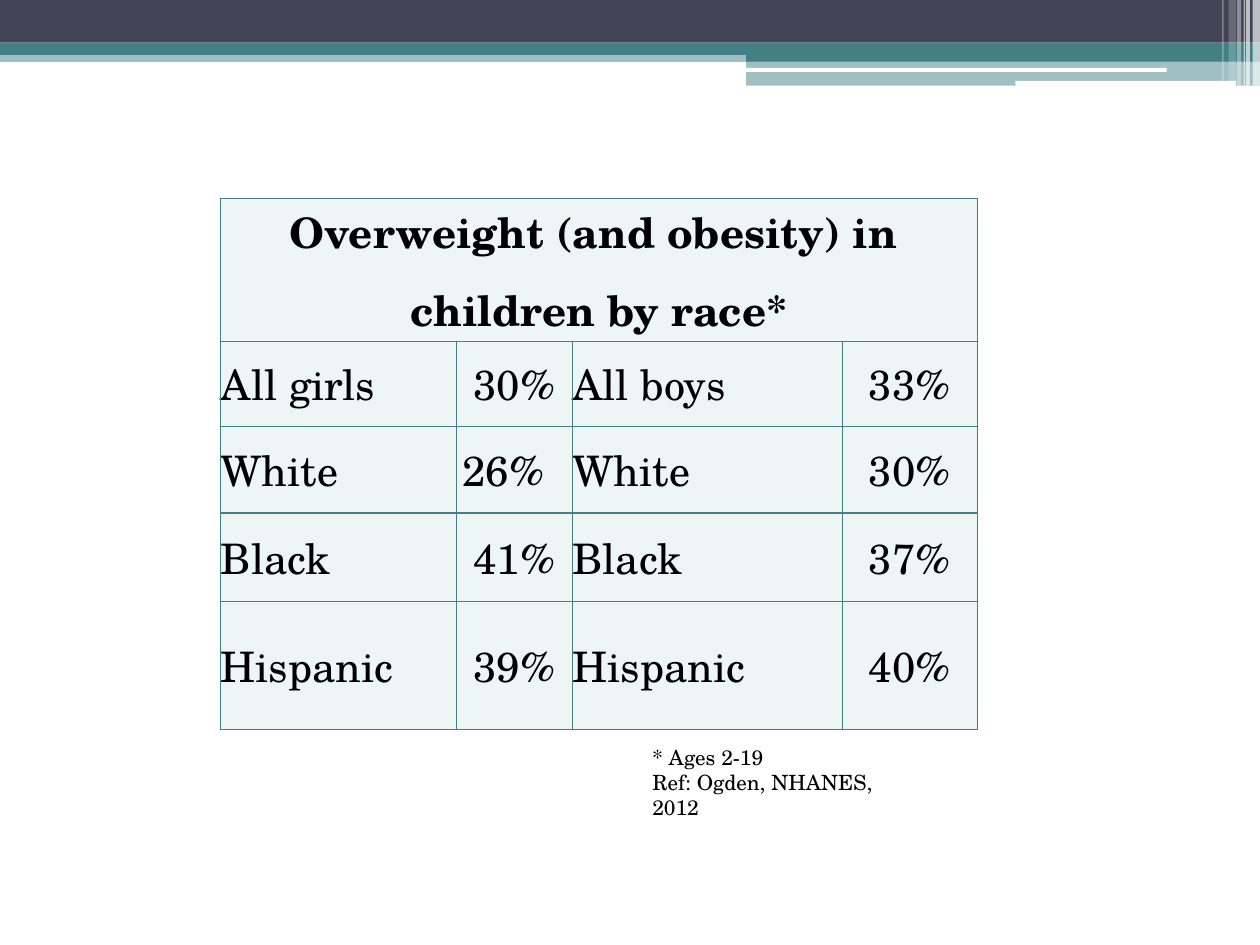
from dataclasses import dataclass

import pptx
import pptx.dml.color
import pptx.enum.shapes
import pptx.enum.text
import pptx.oxml
import pptx.oxml.ns
import pptx.util
from lxml import etree

Cm = pptx.util.Cm
Pt = pptx.util.Pt
RGBColor = pptx.dml.color.RGBColor
Kind = pptx.enum.shapes.MSO_SHAPE
Align = pptx.enum.text.PP_ALIGN
qn = pptx.oxml.ns.qn

TEAL = RGBColor(0x43, 0x80, 0x86)
SLATE = RGBColor(0x42, 0x44, 0x56)
WHITE = RGBColor(0xFF, 0xFF, 0xFF)
BLACK = RGBColor(0x00, 0x00, 0x00)
PALE = RGBColor(0xED, 0xF5, 0xF5)
FONT = "TeX Gyre Schola"


@dataclass
class Band:
    left: float
    top: float
    width: float
    height: float
    color: RGBColor
    alpha: int = 100
    kind: Kind = Kind.RECTANGLE


@dataclass
class Group:
    girls: str
    girl_rate: str
    boys: str
    boy_rate: str
    height: float


BANDS = [
    Band(0, 1.02, 25.4, 0.23, TEAL, 50),
    Band(0, 0, 25.4, 0.86, SLATE),
    Band(0, 0.86, 25.4, 0.25, TEAL),
    Band(15.04, 0.99, 10.36, 0.25, TEAL),
    Band(15.04, 1.22, 10.36, 0.51, TEAL, 50),
    Band(15.01, 1.37, 8.51, 0.08, WHITE, kind=Kind.ROUNDED_RECTANGLE),
    Band(20.47, 1.63, 4.45, 0.1, WHITE, kind=Kind.ROUNDED_RECTANGLE),
    Band(25.25, 0, 0.15, 1.73, WHITE, 65),
    Band(25.12, 0, 0.08, 1.73, WHITE, 65),
    Band(25.07, 0, 0.03, 1.73, WHITE, 60),
    Band(24.94, 0, 0.08, 1.73, WHITE, 40),
    Band(24.77, 0, 0.15, 1.63, WHITE, 20),
    Band(24.64, 0, 0.03, 1.63, WHITE, 30),
]

HEAD = ["Overweight (and obesity) in ", "children by race*"]
HEAD_TALL = 2.74
GROUPS = [
    Group("All girls", "30%", "All boys", "33%", 1.7),
    Group("White", "26%", "White", "30%", 1.75),
    Group("Black", "41%", "Black", "37%", 1.78),
    Group("Hispanic", "39%", "Hispanic", "40%", 2.59),
]
WIDTHS = [4.75, 2.34, 5.44, 2.72]
NOTE = ["* Ages 2-19", "Ref: Ogden, NHANES, 2012"]


def draw_band(slide, band: Band) -> None:
    shape = slide.shapes.add_shape(
        band.kind, Cm(band.left), Cm(band.top), Cm(band.width), Cm(band.height)
    )
    shape.shadow.inherit = False
    shape.line.fill.background()
    shape.fill.solid()
    shape.fill.fore_color.rgb = band.color
    if band.alpha < 100:
        color = shape._element.spPr.find(".//" + qn("a:srgbClr"))
        etree.SubElement(color, qn("a:alpha"), val=str(band.alpha * 1000))


def write(frame, lines: list[str], size: int, align: Align,
          bold: bool = False, gap: float = 0) -> None:
    for index, line in enumerate(lines):
        para = frame.paragraphs[0] if index == 0 else frame.add_paragraph()
        para.alignment = align
        if index:
            para.space_before = Pt(gap)
        run = para.add_run()
        run.text = line
        run.font.name = FONT
        run.font.size = Pt(size)
        run.font.bold = bold
        run.font.color.rgb = BLACK


def dress(cell) -> None:
    props = cell._tc.get_or_add_tcPr()
    for side in ("lnL", "lnR", "lnT", "lnB"):
        line = etree.SubElement(props, qn("a:" + side), w=str(Pt(0.75)))
        fill = etree.SubElement(line, qn("a:solidFill"))
        etree.SubElement(fill, qn("a:srgbClr"), val=str(TEAL))
    cell.fill.solid()
    cell.fill.fore_color.rgb = PALE
    cell.margin_left = cell.margin_right = 0
    cell.margin_top = cell.margin_bottom = 0
    cell.vertical_anchor = pptx.enum.text.MSO_ANCHOR.MIDDLE


def draw_table(slide) -> None:
    talls = [HEAD_TALL] + [group.height for group in GROUPS]
    table = slide.shapes.add_table(
        len(talls), len(WIDTHS), Cm(4.45), Cm(4.01),
        Cm(sum(WIDTHS)), Cm(sum(talls)),
    ).table
    table.first_row = False
    table.horz_banding = False
    for col, width in zip(table.columns, WIDTHS):
        col.width = Cm(width)
    for row, tall in zip(table.rows, talls):
        row.height = Cm(tall)
        for cell in row.cells:
            dress(cell)
    head = table.cell(0, 0)
    head.merge(table.cell(0, len(WIDTHS) - 1))
    write(head.text_frame, HEAD, 24, Align.CENTER, bold=True, gap=7.5)
    for row, group in enumerate(GROUPS, 1):
        texts = [group.girls, group.girl_rate, group.boys, group.boy_rate]
        for col, text in enumerate(texts):
            align = Align.CENTER if col % 2 else Align.LEFT
            write(table.cell(row, col).text_frame, [text], 24, align)
    table.cell(2, 1).margin_right = Cm(0.45)


def draw_note(slide) -> None:
    box = slide.shapes.add_textbox(Cm(12.9), Cm(14.88), Cm(5.79), Cm(1.27))
    box.text_frame.word_wrap = True
    write(box.text_frame, NOTE, 12, Align.LEFT)


def main() -> None:
    deck = pptx.Presentation()
    deck.slide_width = Cm(25.4)
    deck.slide_height = Cm(19.05)
    slide = deck.slides.add_slide(deck.slide_layouts[6])
    for band in BANDS:
        draw_band(slide, band)
    draw_table(slide)
    draw_note(slide)
    deck.save("out.pptx")


if __name__ == "__main__":
    main()
